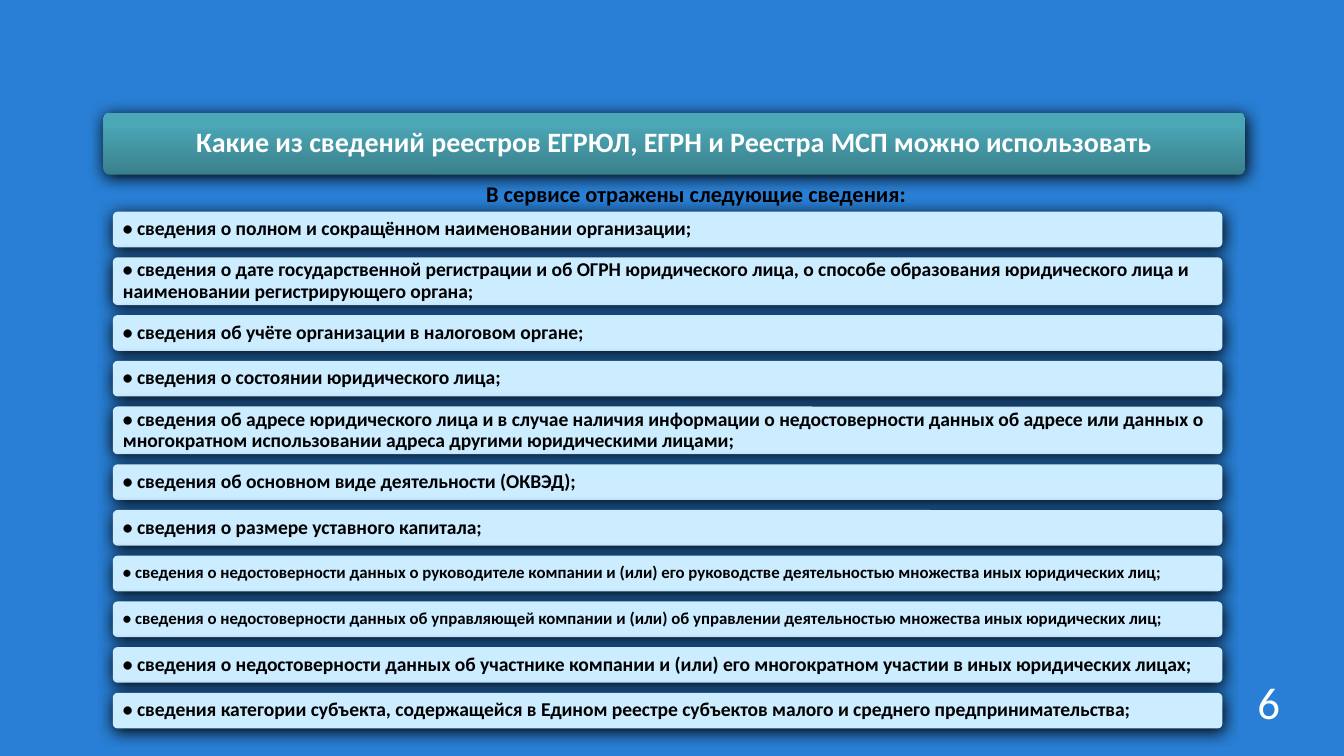
from pptx import Presentation
from pptx.dml.color import RGBColor
from pptx.enum.shapes import MSO_SHAPE
from pptx.enum.text import MSO_ANCHOR, PP_ALIGN
from pptx.oxml import parse_xml
from pptx.oxml.ns import nsdecls
from pptx.util import Pt

EMU_PER_PX = 4572  # 200 px to the inch
FONT = "Calibri"
WHITE, BLACK = "FFFFFF", "000000"
BACKGROUND, ROW_FILL = "297FD5", "CCECFF"
BAR_BOTTOM, BAR_TOP = "3A808B", "4BA6B5"

ROW_HEIGHT, TALL_ROW_HEIGHT, ROW_GAP = 53, 71, 15
ROW_SIZE, SMALL_ROW_SIZE = 10.5, 9

HEADING = "Какие из сведений реестров ЕГРЮЛ, ЕГРН и Реестра МСП можно использовать"
SUBHEADING = "В сервисе отражены следующие сведения:"
ROWS = [
    ("сведения о полном и сокращённом наименовании организации;", ROW_HEIGHT, ROW_SIZE),
    ("сведения о дате государственной регистрации и об ОГРН юридического лица, "
     "о способе образования юридического лица и наименовании регистрирующего органа;",
     TALL_ROW_HEIGHT, ROW_SIZE),
    ("сведения об учёте организации в налоговом органе;", ROW_HEIGHT, ROW_SIZE),
    ("сведения о состоянии юридического лица;", ROW_HEIGHT, ROW_SIZE),
    ("сведения об адресе юридического лица и в случае наличия информации о недостоверности "
     "данных об адресе или данных о многократном использовании адреса другими "
     "юридическими лицами;", TALL_ROW_HEIGHT, ROW_SIZE),
    ("сведения об основном виде деятельности (ОКВЭД);", ROW_HEIGHT, ROW_SIZE),
    ("сведения о размере уставного капитала;", ROW_HEIGHT, ROW_SIZE),
    ("сведения о недостоверности данных о руководителе компании и (или) его руководстве "
     "деятельностью множества иных юридических лиц;", ROW_HEIGHT, SMALL_ROW_SIZE),
    ("сведения о недостоверности данных об управляющей компании и (или) об управлении "
     "деятельностью множества иных юридических лиц;", ROW_HEIGHT, SMALL_ROW_SIZE),
    ("сведения о недостоверности данных об участнике компании и (или) его многократном "
     "участии в иных юридических лицах;", ROW_HEIGHT, ROW_SIZE),
    ("сведения категории субъекта, содержащейся в Едином реестре субъектов малого и "
     "среднего предпринимательства;", ROW_HEIGHT, ROW_SIZE),
]


def px(length):
    return length * EMU_PER_PX


def rgb(hex_color):
    return RGBColor.from_string(hex_color)


def write(shape, text, size, color, align=PP_ALIGN.LEFT, bold=True, spacing=0.9,
          margins=(13, 13)):
    frame = shape.text_frame
    frame.word_wrap = True
    frame.vertical_anchor = MSO_ANCHOR.MIDDLE
    frame.margin_left = frame.margin_right = px(margins[0])
    frame.margin_top = frame.margin_bottom = px(margins[1])
    paragraph = frame.paragraphs[0]
    paragraph.alignment = align
    paragraph.line_spacing = spacing
    run = paragraph.add_run()
    run.text = text
    run.font.name = FONT
    run.font.size = Pt(size)
    run.font.bold = bold
    run.font.color.rgb = rgb(color)


def add_panel(slide, left, top, width, height, radius):
    """Add a borderless rounded panel with a soft dark shadow, still to be filled."""
    panel = slide.shapes.add_shape(
        MSO_SHAPE.ROUNDED_RECTANGLE, px(left), px(top), px(width), px(height))
    panel.adjustments[0] = radius / height
    panel.line.fill.background()
    panel.fill.solid()
    panel._element.spPr.append(parse_xml(
        f'<a:effectLst {nsdecls("a")}>'
        f'<a:outerShdw blurRad="{Pt(8.5)}" dist="{Pt(1)}" dir="5400000" rotWithShape="0">'
        f'<a:srgbClr val="{BLACK}"/></a:outerShdw></a:effectLst>'))
    return panel


def add_heading(slide, left, top, width, height):
    bar = add_panel(slide, left, top, width, height, radius=9)
    bar.fill.gradient()
    bar.fill.gradient_angle = 90
    bottom, upper = bar.fill.gradient_stops
    bottom.color.rgb, bottom.position = rgb(BAR_BOTTOM), 0
    upper.color.rgb, upper.position = rgb(BAR_TOP), 0.8

    title = slide.shapes.title
    title.left, title.top = px(left), px(top)
    title.width, title.height = px(width), px(height)
    write(title, HEADING, 15, WHITE, PP_ALIGN.CENTER)
    title._element.addprevious(bar._element)  # the bar lies behind the title


def add_subheading(slide, left, top, width, height):
    label = slide.shapes.add_textbox(px(left), px(top), px(width), px(height))
    write(label, SUBHEADING, 12, BLACK, PP_ALIGN.CENTER)


def add_rows(slide, left, top, width):
    for text, height, size in ROWS:
        row = add_panel(slide, left, top, width, height, radius=7)
        row.fill.fore_color.rgb = rgb(ROW_FILL)
        write(row, f"• {text}", size, BLACK)
        top += height + ROW_GAP


def add_page_number(slide, left, top, width, height):
    number = slide.shapes.add_textbox(px(left), px(top), px(width), px(height))
    write(number, "6", 24, WHITE, PP_ALIGN.CENTER, bold=False, spacing=1.0,
          margins=(20, 10))


def main():
    presentation = Presentation()
    presentation.slide_width, presentation.slide_height = px(2000), px(1125)
    slide = presentation.slides.add_slide(presentation.slide_layouts[5])
    slide.background.fill.solid()
    slide.background.fill.fore_color.rgb = rgb(BACKGROUND)

    add_page_number(slide, 1820, 992, 136, 104)
    add_heading(slide, 154, 168, 1699, 92)
    add_subheading(slide, 187, 271, 1698, 40)
    add_rows(slide, 168, 315, 1651)
    presentation.save("out.pptx")


if __name__ == "__main__":
    main()
